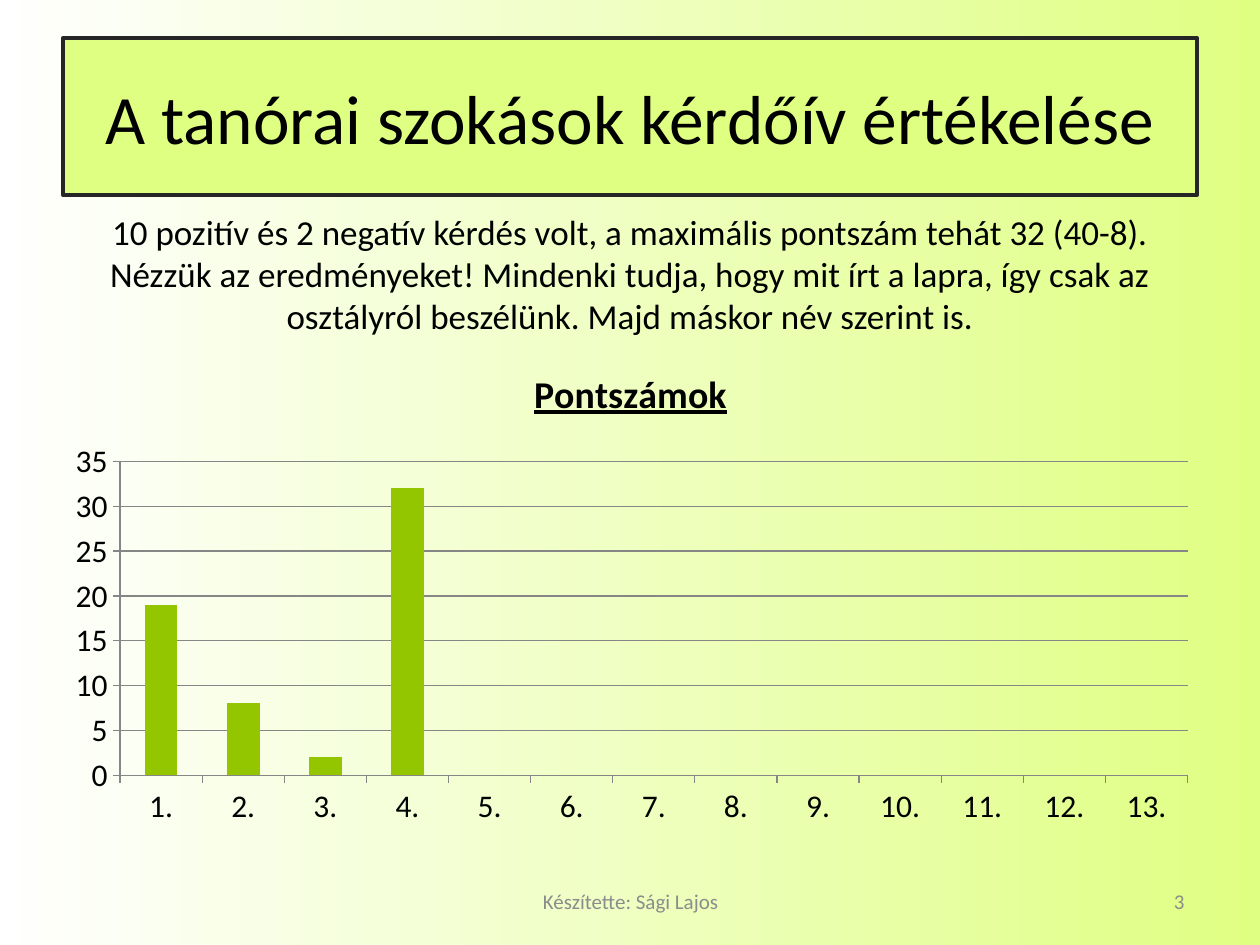
"""Build the slide that evaluates the classroom habits questionnaire."""
from dataclasses import dataclass

from lxml.etree import SubElement
from pptx import Presentation
from pptx.chart.data import CategoryChartData
from pptx.dml.color import RGBColor
from pptx.enum.chart import XL_CHART_TYPE as ChartType, XL_TICK_MARK as TickMark
from pptx.enum.text import MSO_ANCHOR as Anchor, MSO_AUTO_SIZE as AutoSize, PP_ALIGN as Align
from pptx.oxml import parse_xml
from pptx.oxml.ns import nsdecls, qn
from pptx.util import Inches, Pt


@dataclass(frozen=True)
class Theme:
    """Colours, font and type sizes of the slide."""
    font: str = "Calibri"
    text: RGBColor = RGBColor(0, 0, 0)
    muted: RGBColor = RGBColor(0x8C, 0x8C, 0x8C)
    white: RGBColor = RGBColor(0xFF, 0xFF, 0xFF)
    lime: RGBColor = RGBColor(0xDF, 0xFF, 0x82)
    border: RGBColor = RGBColor(0x26, 0x26, 0x26)
    bar: RGBColor = RGBColor(0x94, 0xC6, 0x00)
    grid: RGBColor = RGBColor(0x86, 0x86, 0x86)
    title_size: float = 39.6
    body_size: float = 20
    footer_size: float = 12
    chart_title_size: float = 21.6
    chart_size: float = 18


THEME = Theme()


def style_font(font, size, color=THEME.text, **extras):
    """Apply the theme font with a size, a colour and optional extras."""
    formats = {"name": THEME.font, "size": Pt(size), **extras}
    for name, value in formats.items():
        setattr(font, name, value)
    font.color.rgb = color


def write_text(frame, text, size, color=THEME.text, align=Align.CENTER, anchor=Anchor.MIDDLE):
    """Fill a text frame with one styled paragraph."""
    formats = {"text": text, "word_wrap": True, "auto_size": AutoSize.NONE, "vertical_anchor": anchor}
    for name, value in formats.items():
        setattr(frame, name, value)
    paragraph = frame.paragraphs[0]
    paragraph.alignment = align
    style_font(paragraph.runs[0].font, size, color)


def paint_background(slide):
    """Fade the background from white to lime, left to right."""
    fill = slide.background.fill
    fill.gradient()
    fill.gradient_angle = 0
    for stop, color in zip(fill.gradient_stops, (THEME.white, THEME.lime)):
        stop.color.rgb = color


def add_title(slide, text, box):
    """Turn the title placeholder into a bordered scroll."""
    title = slide.shapes.title
    for name, value in zip(("left", "top", "width", "height"), box):
        setattr(title, name, Inches(value))
    title.element.spPr.insert(1, parse_xml(
        f'<a:prstGeom {nsdecls("a")} prst="horizontalScroll"><a:avLst>'
        '<a:gd name="adj" fmla="val 18100"/></a:avLst></a:prstGeom>'))
    title.fill.solid()
    title.fill.fore_color.rgb = THEME.lime
    title.line.color.rgb = THEME.border
    title.line.width = Pt(2)
    write_text(title.text_frame, text, THEME.title_size)


def add_text(slide, text, box, size, **formats):
    """Add a wrapped text box."""
    textbox = slide.shapes.add_textbox(*map(Inches, box))
    write_text(textbox.text_frame, text, size, **formats)


def place_plot(chart, **fractions):
    """Fix the inner plot area as fractions of the chart."""
    plot_area = chart.element.find(qn("c:chart")).find(qn("c:plotArea"))
    for previous in plot_area.findall(qn("c:layout")):
        plot_area.remove(previous)
    layout = parse_xml(f'<c:layout {nsdecls("c")}><c:manualLayout/></c:layout>')
    settings = {"layoutTarget": "inner", "xMode": "edge", "yMode": "edge", **fractions}
    for name, value in settings.items():
        SubElement(layout[0], qn(f"c:{name}"), val=str(value))
    plot_area.insert(0, layout)


def add_score_chart(slide, name, scores, count, box):
    """Add the column chart of scores, leaving later places empty."""
    data = CategoryChartData()
    data.categories = [f"{place}." for place in range(1, count + 1)]
    data.add_series(name, scores + [None] * (count - len(scores)))
    chart = slide.shapes.add_chart(ChartType.COLUMN_CLUSTERED, *map(Inches, box), data).chart
    style_font(chart.font, THEME.chart_size)
    chart.has_legend = False
    chart.has_title = True
    heading = chart.chart_title.text_frame
    heading.text = name
    style_font(heading.paragraphs[0].runs[0].font, THEME.chart_title_size, bold=True, underline=True)
    chart.chart_title.include_in_layout = False

    columns = chart.plots[0]
    columns.gap_width = 150
    columns.vary_by_categories = False
    columns.series[0].format.fill.solid()
    columns.series[0].format.fill.fore_color.rgb = THEME.bar

    scale = chart.value_axis
    formats = {"minimum_scale": 0, "maximum_scale": 35, "major_unit": 5, "has_major_gridlines": True}
    for attribute, value in formats.items():
        setattr(scale, attribute, value)
    for axis in (scale, chart.category_axis):
        axis.major_tick_mark = TickMark.OUTSIDE
    for part in (scale, chart.category_axis, scale.major_gridlines):
        part.format.line.color.rgb = THEME.grid
        part.format.line.width = Pt(0.75)
    place_plot(chart, x=0.06, y=0.24, w=0.92, h=0.64)


def main():
    """Build and save the slide."""
    deck = Presentation()
    deck.slide_width, deck.slide_height = Inches(10), Inches(7.5)
    slide = deck.slides.add_slide(deck.slide_layouts[5])
    paint_background(slide)
    add_title(slide, "A tanórai szokások kérdőív értékelése", (0.5, 0.3, 9, 1.25))
    add_text(slide, "Készítette: Sági Lajos", (3.42, 6.95, 3.17, 0.4),
             THEME.footer_size, color=THEME.muted)
    add_text(slide, "3", (7.17, 6.95, 2.33, 0.4),
             THEME.footer_size, color=THEME.muted, align=Align.RIGHT)
    add_text(slide, "10 pozitív és 2 negatív kérdés volt, a maximális pontszám tehát 32 (40-8). "
             "Nézzük az eredményeket! Mindenki tudja, hogy mit írt a lapra, így csak az "
             "osztályról beszélünk. Majd máskor név szerint is.",
             (0.51, 1.62, 8.98, 1.11), THEME.body_size, anchor=Anchor.TOP)
    add_score_chart(slide, "Pontszámok", [19, 8, 2, 32], 13, (0.4, 2.73, 9.21, 3.89))
    deck.save("out.pptx")


if __name__ == "__main__":
    main()
